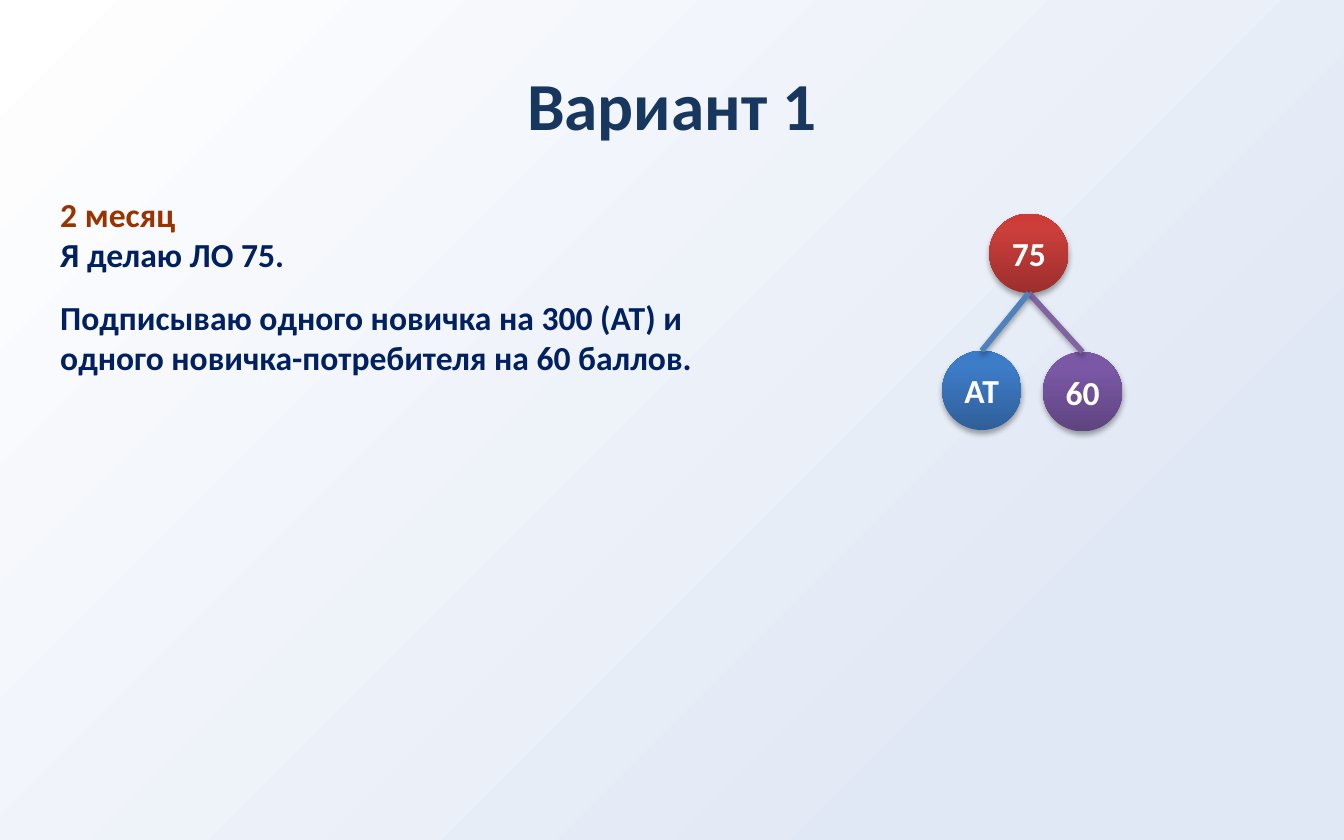
from dataclasses import dataclass

from lxml.etree import SubElement
from pptx import Presentation
from pptx.dml.color import RGBColor
from pptx.enum.shapes import MSO_CONNECTOR, MSO_SHAPE
from pptx.enum.text import MSO_ANCHOR as Anchor, PP_ALIGN as Align
from pptx.oxml.ns import qn
from pptx.util import Emu, Pt

SCALE = 9144  # EMU per px, 100 px to the inch
DIAMETER = 59
FONT = "Calibri"
COLORS = {
    "title": "17375E", "month": "993300", "body": "002060", "white": "FFFFFF",
    "bg_end": "E1E8F5", "shadow": "000000",
    "line_at": "4F81BD", "line_60": "8064A2",
    "red_0": "9C2F2D", "red_80": "CB3E3A", "red_100": "CE3B37",
    "blue_0": "2F5F99", "blue_80": "3D7CC7", "blue_100": "3A7CCB",
    "purple_0": "5F4480", "purple_80": "7B58A6", "purple_100": "7C57A8",
}


@dataclass
class Node:
    label: str
    x: int
    y: int
    hue: str
    line: str = ""


ROOT = Node("75", 736, 159, "red")
CHILDREN = [Node("60", 776, 262, "purple", "line_60"),
            Node("АТ", 701, 261, "blue", "line_at")]


def px(n: int) -> Emu:
    return Emu(n * SCALE)


def rgb(name: str) -> RGBColor:
    return RGBColor.from_string(COLORS[name])


def set_gradient(fill, element, stops: dict[int, str], angle: int) -> None:
    """Fill with colour stops given in percent; angle is counter-clockwise."""
    fill.gradient()
    fill.gradient_angle = angle
    gs_list = next(element.iter(qn("a:gsLst")))
    for gs in list(gs_list):
        gs_list.remove(gs)
    for pos, name in stops.items():
        gs = SubElement(gs_list, qn("a:gs"), pos=str(pos * 1000))
        SubElement(gs, qn("a:srgbClr"), val=COLORS[name])


def add_shadow(shape) -> None:
    sp_pr = shape._element.spPr
    for old in sp_pr.findall(qn("a:effectLst")):
        sp_pr.remove(old)
    effects = SubElement(sp_pr, qn("a:effectLst"))
    shadow = SubElement(effects, qn("a:outerShdw"), blurRad=str(Pt(3.1)),
                        dist=str(Pt(1.8)), dir="5400000", rotWithShape="0")
    color = SubElement(shadow, qn("a:srgbClr"), val=COLORS["shadow"])
    SubElement(color, qn("a:alpha"), val="35000")


def format_text(p, size: int, color: str, align=Align.LEFT) -> None:
    p.alignment = align
    for r in p.runs:
        r.font.name, r.font.size, r.font.bold = FONT, Pt(size), True
        r.font.color.rgb = rgb(color)


def add_text(s, x: int, y: int, w: int, h: int):
    tf = s.shapes.add_textbox(px(x), px(y), px(w), px(h)).text_frame
    tf.word_wrap = True
    return tf


def add_node(s, node: Node):
    sp = s.shapes.add_shape(MSO_SHAPE.OVAL, px(node.x), px(node.y),
                            px(DIAMETER), px(DIAMETER))
    stops = {pos: f"{node.hue}_{pos}" for pos in (0, 80, 100)}
    set_gradient(sp.fill, sp._element, stops, 90)
    sp.line.fill.background()
    add_shadow(sp)
    tf = sp.text_frame
    tf.margin_left = tf.margin_right = px(4)
    tf.margin_top = tf.margin_bottom = px(5)
    tf.vertical_anchor = Anchor.MIDDLE
    tf.text = node.label
    format_text(tf.paragraphs[0], 18, "white", Align.CENTER)
    return sp


def add_link(s, parent, child, color: str) -> None:
    """Join the bottom of the parent circle to the top of the child."""
    line = s.shapes.add_connector(
        MSO_CONNECTOR.STRAIGHT,
        parent.left + parent.width // 2, parent.top + parent.height,
        child.left + child.width // 2, child.top)
    line.end_connect(child, 0)
    line.line.color.rgb = rgb(color)
    line.line.width = Pt(3)
    add_shadow(line)


def main() -> None:
    prs = Presentation()
    prs.slide_width, prs.slide_height = px(1000), px(625)
    s = prs.slides.add_slide(prs.slide_layouts[6])
    set_gradient(s.background.fill, s.element, {0: "white", 80: "bg_end"}, 315)

    tf = add_text(s, 50, 25, 900, 104)
    tf.vertical_anchor = Anchor.MIDDLE
    tf.text = "Вариант 1"
    format_text(tf.paragraphs[0], 36, "title", Align.CENTER)

    tf = add_text(s, 35, 139, 543, 148)
    tf.text = ("2 месяц\nЯ делаю ЛО 75.\nПодписываю одного новичка на 300 (АТ) "
               "и одного новичка-потребителя на 60 баллов.")
    for p, color in zip(tf.paragraphs, ("month", "body", "body")):
        format_text(p, 18, color)
    tf.paragraphs[2].space_before = Pt(12)

    root = add_node(s, ROOT)
    circles = [add_node(s, child) for child in CHILDREN]
    for child, circle in zip(CHILDREN, circles):
        add_link(s, root, circle, child.line)

    prs.save("out.pptx")


if __name__ == "__main__":
    main()
